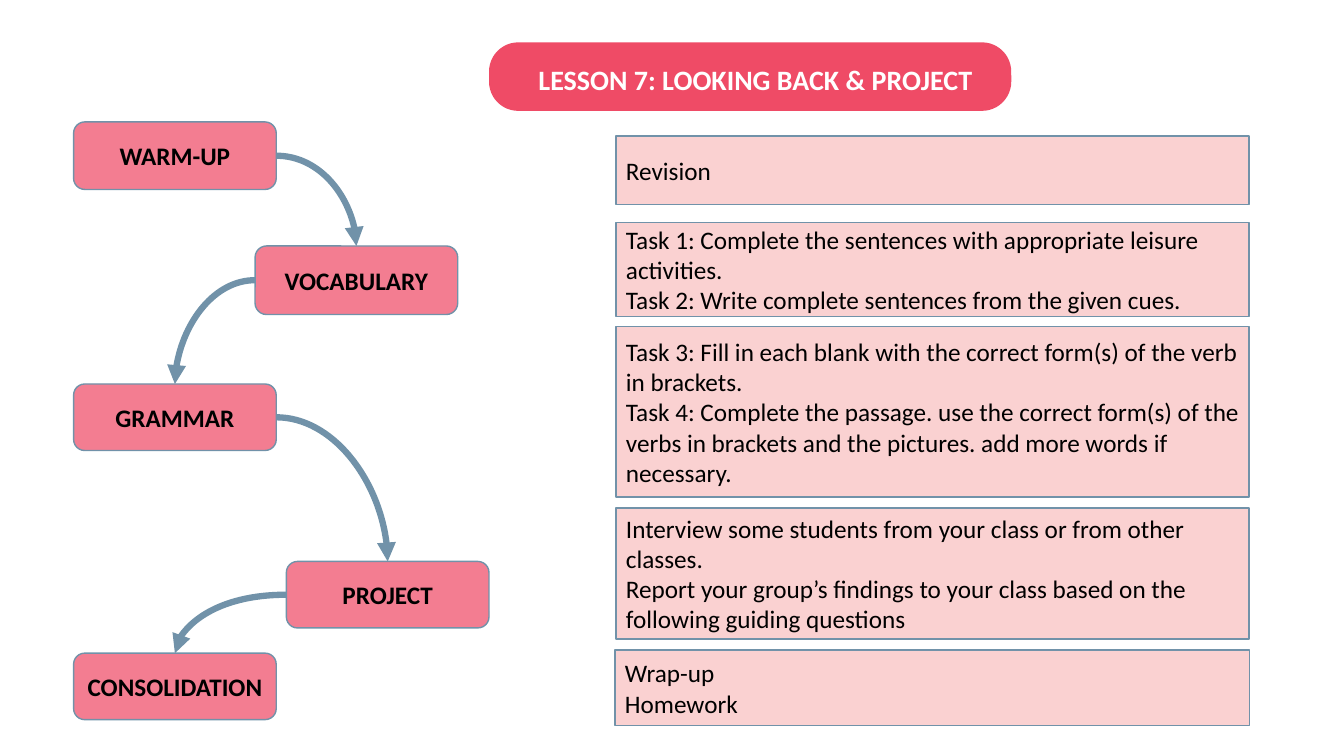
from pptx import Presentation
from pptx.dml.color import RGBColor
from pptx.enum.shapes import MSO_CONNECTOR, MSO_SHAPE
from pptx.enum.text import MSO_ANCHOR, MSO_AUTO_SIZE, PP_ALIGN
from pptx.oxml.ns import qn
from pptx.util import Inches, Pt
from lxml import etree

RECTANGLE, ROUNDED = MSO_SHAPE.RECTANGLE, MSO_SHAPE.ROUNDED_RECTANGLE
CURVE = MSO_CONNECTOR.CURVE
LEFT, CENTER = PP_ALIGN.LEFT, PP_ALIGN.CENTER
TOP, MIDDLE = MSO_ANCHOR.TOP, MSO_ANCHOR.MIDDLE
FIT_SHAPE = MSO_AUTO_SIZE.SHAPE_TO_FIT_TEXT

RED = RGBColor(0xEF, 0x4B, 0x66)
PINK = RGBColor(0xF3, 0x7D, 0x91)
PALE = RGBColor(0xF7, 0xA5, 0xA5)
STEEL = RGBColor(0x71, 0x92, 0xA9)
BLACK = RGBColor(0, 0, 0)
WHITE = RGBColor(0xFF, 0xFF, 0xFF)

TOP_SITE, LEFT_SITE, RIGHT_SITE = 0, 1, 3
STAGE_WIDTH = 2.01

# Stage name, left, top, height
STAGES = [
    ("WARM-UP", 0.73, 1.21, 0.67),
    ("VOCABULARY", 2.53, 2.44, 0.68),
    ("GRAMMAR", 0.73, 3.81, 0.66),
    ("PROJECT", 2.84, 5.57, 0.66),
    ("CONSOLIDATION", 0.73, 6.48, 0.66),
]

# Left, top, width, height, paragraphs
ACTIVITIES = [
    (6.11, 1.35, 6.28, 0.68, ["Revision"]),
    (6.11, 2.21, 6.28, 0.93, [
        "Task 1: Complete the sentences with appropriate leisure activities.",
        "Task 2: Write complete sentences from the given cues."]),
    (6.11, 3.24, 6.28, 1.69, [
        "Task 3: Fill in each blank with the correct form(s) of the verb in brackets.",
        "Task 4: Complete the passage. use the correct form(s) of the verbs in "
        "brackets and the pictures. add more words if necessary."]),
    (6.11, 5.04, 6.28, 1.3, [
        "Interview some students from your class or from other classes.",
        "Report your group’s findings to your class based on the following "
        "guiding questions"]),
    (6.1, 6.45, 6.29, 0.75, ["Wrap-up", "Homework"]),
]


class LessonPage:
    font = "Calibri"

    def __init__(self, deck):
        self.page = deck.slides.add_slide(deck.slide_layouts[5])
        self.shapes = self.page.shapes

    def set_text(self, box, text, size, color, bold, align, anchor):
        frame = box.text_frame
        frame.word_wrap = True
        frame.vertical_anchor = anchor
        frame.text = text
        for para in frame.paragraphs:
            para.alignment = align
            for span in para.runs:
                span.font.name = self.font
                span.font.size = Pt(size)
                span.font.bold = bold
                span.font.color.rgb = color

    def panel(self, kind, left, top, width, height, fill, outlined=True):
        box = self.shapes.add_shape(
            kind, Inches(left), Inches(top), Inches(width), Inches(height))
        box.shadow.inherit = False
        box.fill.solid()
        box.fill.fore_color.rgb = fill
        if outlined:
            box.line.color.rgb = STEEL
            box.line.width = Pt(1)
        else:
            box.line.fill.background()
        return box

    def title(self, text):
        pill = self.panel(ROUNDED, 4.85, 0.42, 5.18, 0.68, RED, outlined=False)
        pill.adjustments[0] = 0.427
        box = self.shapes.title
        box.left, box.top = Inches(5.24), Inches(0.57)
        box.width, box.height = Inches(4.89), Inches(0.44)
        self.set_text(box, text, 20, WHITE, True, LEFT, TOP)
        box.text_frame.auto_size = FIT_SHAPE
        # Bring the title in front of its pill
        pill._element.addnext(box._element)

    def stage(self, name, left, top, height):
        box = self.panel(ROUNDED, left, top, STAGE_WIDTH, height, PINK)
        self.set_text(box, name, 18, BLACK, True, CENTER, MIDDLE)
        return box

    def activity(self, left, top, width, height, paragraphs):
        box = self.panel(RECTANGLE, left, top, width, height, PALE)
        color = box._element.spPr.find(qn("a:solidFill"))[0]
        etree.SubElement(color, qn("a:alpha"), val="50000")
        self.set_text(box, "\n".join(paragraphs), 18, BLACK, False, LEFT, MIDDLE)

    def arrow(self, source, target):
        rightward = target.left > source.left
        start_x = source.left + (source.width if rightward else 0)
        arrow = self.shapes.add_connector(
            CURVE, start_x, source.top + source.height // 2,
            target.left + target.width // 2, target.top)
        arrow.begin_connect(source, RIGHT_SITE if rightward else LEFT_SITE)
        arrow.end_connect(target, TOP_SITE)
        arrow.line.color.rgb = STEEL
        arrow.line.width = Pt(4.5)
        properties = arrow._element.spPr
        properties.find(qn("a:prstGeom")).set("prst", "curvedConnector2")
        etree.SubElement(properties.find(qn("a:ln")), qn("a:tailEnd"), type="triangle")
        etree.SubElement(properties, qn("a:effectLst"))


def main():
    deck = Presentation()
    deck.slide_width, deck.slide_height = Inches(13.33), Inches(7.5)
    lesson = LessonPage(deck)

    # Heading
    lesson.title("LESSON 7: LOOKING BACK & PROJECT")

    # Lesson stages and the arrows between them
    boxes = [lesson.stage(*stage) for stage in STAGES]
    for source, target in zip(boxes, boxes[1:]):
        lesson.arrow(source, target)

    # Activities of each stage
    for activity in ACTIVITIES:
        lesson.activity(*activity)

    deck.save("out.pptx")


if __name__ == "__main__":
    main()
